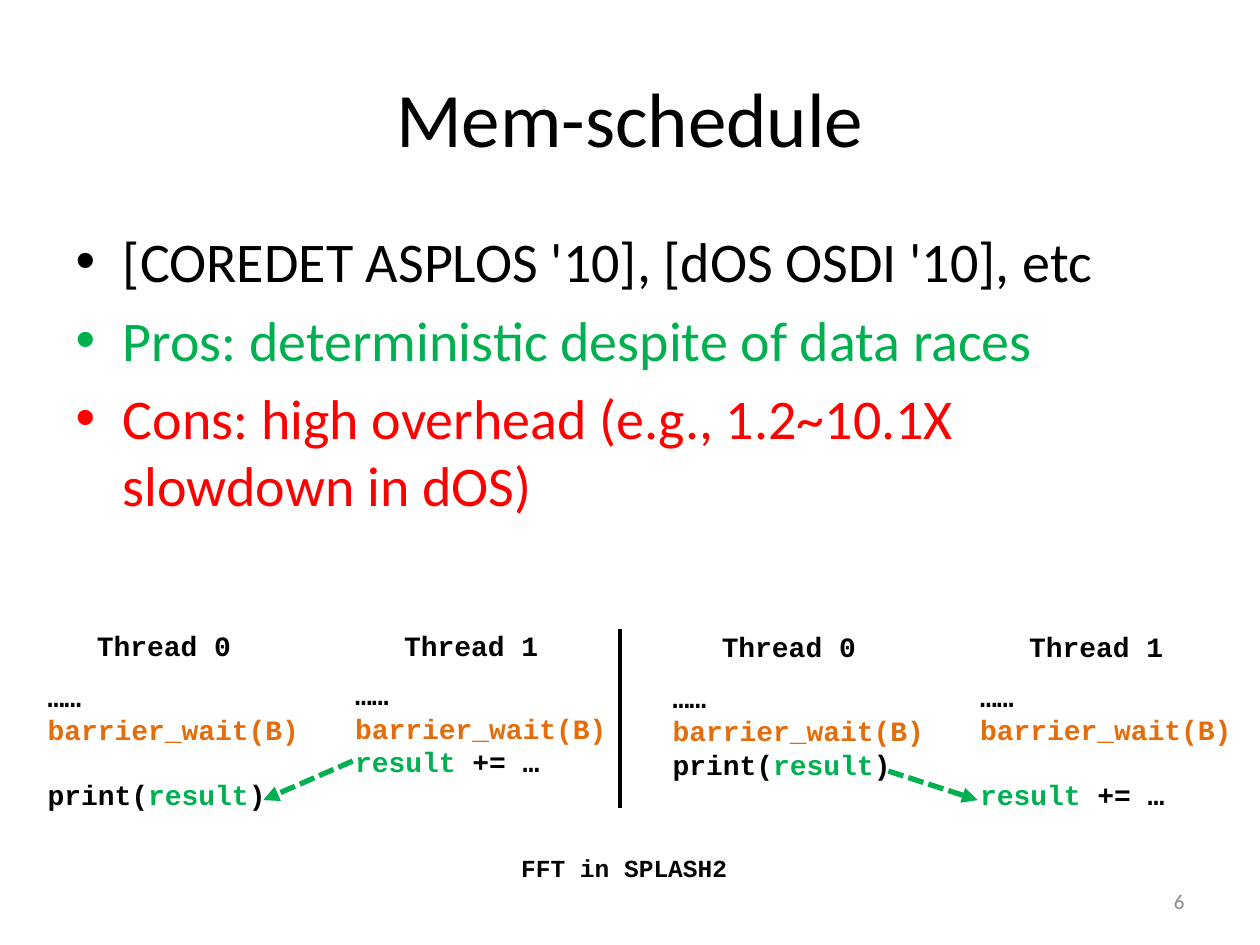
from lxml import etree
from pptx import Presentation
from pptx import util as u
from pptx.dml.color import RGBColor
from pptx.enum import dml, shapes, text
from pptx.oxml.ns import qn

PX = 9144  # EMU; 100 px to the inch
BLACK = RGBColor(0x00, 0x00, 0x00)
GREEN = RGBColor(0x00, 0xB0, 0x50)
RED = RGBColor(0xFF, 0x00, 0x00)
ORANGE = RGBColor(0xE4, 0x6C, 0x0A)
GRAY = RGBColor(0x8C, 0x8C, 0x8C)

BULLETS = [
    ("[COREDET ASPLOS '10], [dOS OSDI '10], etc", BLACK),
    ("Pros: deterministic despite of data races", GREEN),
    ("Cons: high overhead (e.g., 1.2~10.1X slowdown in dOS)", RED),
]
PRINT = [("print(", BLACK), ("result", GREEN), (")", BLACK)]
ADD = [("result", GREEN), (" += …", BLACK)]
# heading, heading left and top, code left and top, last statement, runs late
THREADS = [
    ("Thread 0", 67, 494, 28, 534, PRINT, True),
    ("Thread 1", 311, 494, 272, 533, ADD, False),
    ("Thread 0", 563, 495, 524, 535, PRINT, False),
    ("Thread 1", 807, 495, 768, 534, ADD, True),
]
BOX_W, LINE_PT = 252, 18


class Deck:
    body_font, code_font = "Calibri", "Courier New"

    def __init__(self, width, height):
        self.prs = Presentation()
        self.prs.slide_width, self.prs.slide_height = width * PX, height * PX
        self.s = self.prs.slides.add_slide(self.prs.slide_layouts[1])

    def style(self, r, size, color, font, bold=False):
        r.font.size, r.font.name, r.font.bold = u.Pt(size), font, bold
        r.font.color.rgb = color

    def place(self, sp, x, y, w, h):
        sp.left, sp.top, sp.width, sp.height = (v * PX for v in (x, y, w, h))

    def title(self, content, x, y, w, h):
        sp = self.s.shapes.title
        self.place(sp, x, y, w, h)
        sp.text_frame.text = content
        self.style(sp.text_frame.paragraphs[0].runs[0], 44, BLACK, self.body_font)

    def bullets(self, items, x, y, w, h):
        sp = self.s.placeholders[1]
        self.place(sp, x, y, w, h)
        tf = sp.text_frame
        tf.auto_size = text.MSO_AUTO_SIZE.NONE
        tf.text = "\n".join(content for content, _ in items)
        for p, (_, color) in zip(tf.paragraphs, items):
            self.style(p.runs[0], 32, color, self.body_font)

    def box(self, x, y, w, h):
        tf = self.s.shapes.add_textbox(x * PX, y * PX, w * PX, h * PX).text_frame
        tf.word_wrap = True
        return tf

    def label(self, content, x, y, w, h, size=16, color=BLACK, font=code_font,
              bold=True, align=text.PP_ALIGN.LEFT, anchor=text.MSO_ANCHOR.TOP):
        tf = self.box(x, y, w, h)
        tf.text, tf.vertical_anchor = content, anchor
        p = tf.paragraphs[0]
        p.alignment = align
        self.style(p.runs[0], size, color, font, bold)

    def code(self, lines, x, y, w, h, late):
        """Write lines of (text, colour) runs; late leaves a line free above the last."""
        tf = self.box(x, y, w, h)
        for i, line in enumerate(lines):
            p = tf.add_paragraph() if i else tf.paragraphs[0]
            for content, color in line:
                r = p.add_run()
                r.text = content
                self.style(r, 16, color, self.code_font, True)
        if late:
            p.space_before = u.Pt(LINE_PT)

    def line(self, x1, y1, x2, y2, color, width):
        ln = self.s.shapes.add_connector(
            shapes.MSO_CONNECTOR.STRAIGHT, x1 * PX, y1 * PX, x2 * PX, y2 * PX)
        ln.line.color.rgb, ln.line.width = color, u.Pt(width)
        etree.SubElement(ln._element.spPr, qn("a:effectLst"))
        return ln

    def dashed_arrow(self, *ends):
        ln = self.line(*ends, GREEN, 3)
        ln.line.dash_style = dml.MSO_LINE.SQUARE_DOT
        etree.SubElement(ln.line._get_or_add_ln(), qn("a:tailEnd"), type="triangle")


def main():
    d = Deck(1000, 750)
    d.title("Mem-schedule", 50, 30, 900, 125)
    d.bullets(BULLETS, 50, 175, 900, 546)
    d.label("6", 717, 695, 233, 40, 12, GRAY, d.body_font, False,
            text.PP_ALIGN.RIGHT, text.MSO_ANCHOR.MIDDLE)

    for name, head_x, head_y, x, y, last, late in THREADS:
        d.label(name, head_x, head_y, BOX_W, 37)
        lines = [[("……", BLACK)], [("barrier_wait(B)", ORANGE)], last]
        d.code(lines, x, y, BOX_W, 118 if late else 91, late)
    d.label("FFT in SPLASH2", 287, 672, 417, 34, 14, align=text.PP_ALIGN.CENTER)

    d.line(492, 499, 492, 641, BLACK, 2)
    d.dashed_arrow(280, 604, 209, 635)
    d.dashed_arrow(705, 612, 776, 635)
    d.prs.save("out.pptx")


if __name__ == "__main__":
    main()
